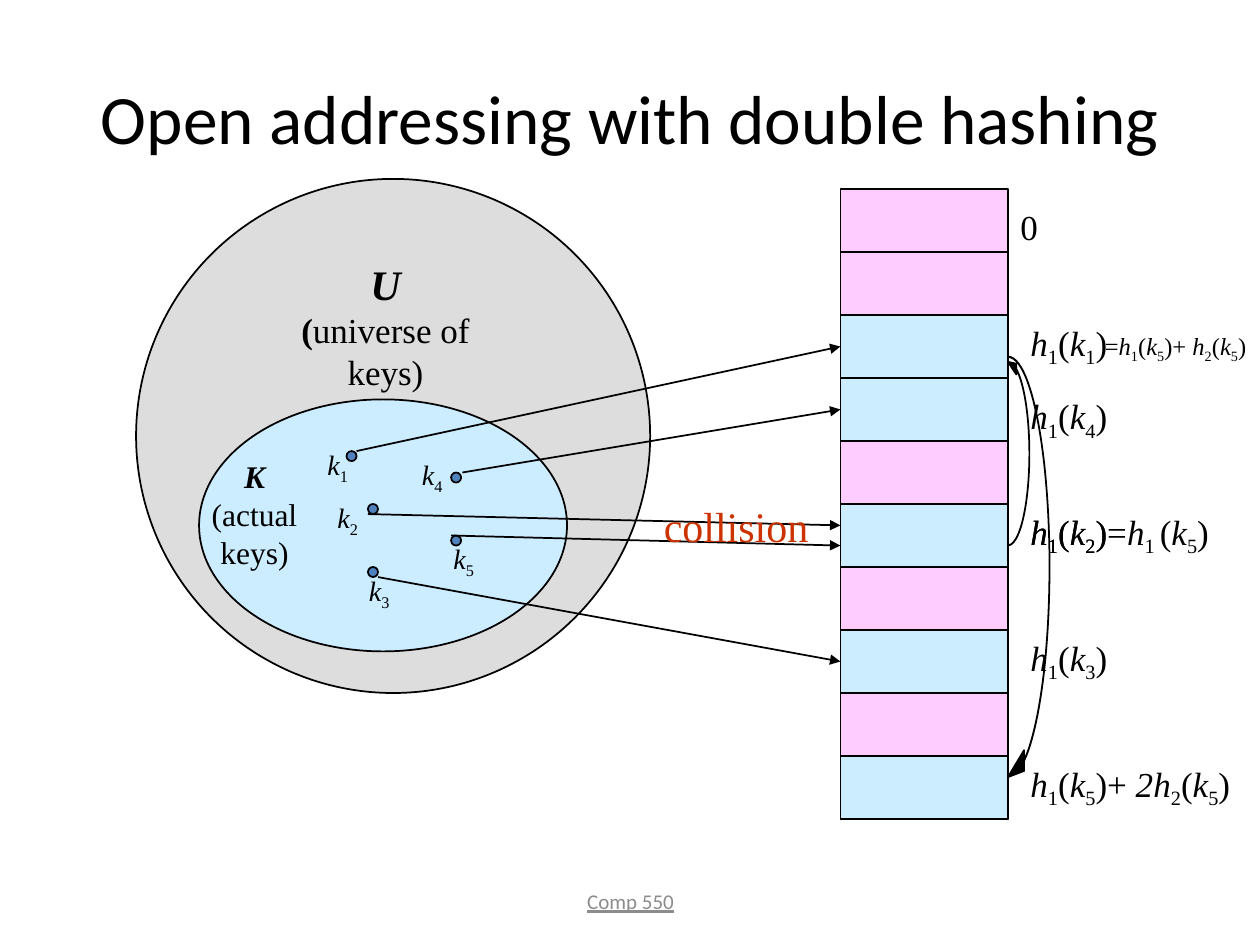
from itertools import groupby

from lxml.etree import SubElement
from pptx import Presentation
from pptx.dml.color import RGBColor
from pptx.enum.shapes import MSO_CONNECTOR as Connector, MSO_SHAPE as Shape
from pptx.enum.text import MSO_ANCHOR as Anchor, MSO_AUTO_SIZE as AutoSize, PP_ALIGN as Align
from pptx.oxml.ns import qn
from pptx.util import Inches, Pt

SERIF, SANS = "Times New Roman", "Calibri"
BLACK, GREY, RED = "000000", "8C8C8C", "CC3300"
PINK, SKY, SILVER, BLUE = "FFCCFF", "CCECFF", "DDDDDD", "4F81BD"


def color(value):
    return RGBColor.from_string(value)


def add_span(para, text, size, font=SERIF, ink=BLACK, subscript=False, **formats):
    span = para.add_run()
    span.text = text
    span.font.color.rgb = color(ink)
    for name, value in {"name": font, "size": Pt(size), **formats}.items():
        setattr(span.font, name, value)
    if subscript:
        span.font._element.set("baseline", "-25000")


def add_text(page, box, wrap=False, **formats):
    """Add an empty text box and return its text frame."""
    frame = page.shapes.add_textbox(*map(Inches, box)).text_frame
    settings = {"word_wrap": wrap, "auto_size": AutoSize.SHAPE_TO_FIT_TEXT, **formats}
    for name, value in settings.items():
        setattr(frame, name, value)
    return frame


def add_formula(page, box, formula, size=20, wrap=False):
    """Write a formula: a character after _ is a subscript, variables are italic."""
    marked, subscript = [], False
    for char in formula:
        if char == "_":
            subscript = True
            continue
        style = "sub" if subscript else "plain" if char in "()+=0" else "italic"
        marked.append((char, style))
        subscript = False
    para = add_text(page, box, wrap).paragraphs[0]
    for style, group in groupby(marked, key=lambda mark: mark[1]):
        text = "".join(char for char, _ in group)
        add_span(para, text, size, italic=style == "italic", subscript=style == "sub")


def add_paragraphs(frame, lines):
    """Fill a frame with centred paragraphs, each a list of (text, formats)."""
    for number, spans in enumerate(lines):
        para = frame.add_paragraph() if number else frame.paragraphs[0]
        para.alignment = Align.CENTER
        for text, formats in spans:
            add_span(para, text, **formats)


def add_outlined(page, kind, box, fill):
    shape = page.shapes.add_shape(kind, *map(Inches, box))
    shape.shadow.inherit = False
    shape.fill.solid()
    shape.fill.fore_color.rgb = color(fill)
    shape.line.color.rgb = color(BLACK)
    shape.line.width = Pt(1)
    return shape


def add_line(page, start, end, arrow=False):
    line = page.shapes.add_connector(Connector.STRAIGHT, *map(Inches, (*start, *end)))
    line.line.color.rgb = color(BLACK)
    line.line.width = Pt(1)
    if arrow:
        SubElement(line.line._get_or_add_ln(), qn("a:tailEnd"), type="triangle")
    SubElement(line._element.spPr, qn("a:effectLst"))


def add_title(page, box):
    title = page.shapes.title
    title.left, title.top, title.width, title.height = map(Inches, box)
    title.text_frame.vertical_anchor = Anchor.MIDDLE
    add_paragraphs(title.text_frame, [
        [("Open addressing with double hashing", {"size": 39.6, "font": SANS})]])


def add_hash_table(page, box, slots, used):
    left, top, width, height = box
    step = height / slots
    add_outlined(page, Shape.RECTANGLE, box, PINK)
    for slot in range(1, slots):
        y = top + slot * step
        add_line(page, (left, y), (left + width, y))
    for slot in used:
        add_outlined(page, Shape.RECTANGLE, (left, top + slot * step, width, step), SKY)


def add_slot_labels(page, left, top):
    add_formula(page, (left, top + 0.08, 0.34, 0.43), "0")
    labels = [
        (1, 0.84, "h_1(k_1)"),
        (1.58, 0.84, "h_1(k_4)"),
        (2.5, 0.84, "h_1(k_2)"),
        (3.5, 0.84, "h_1(k_3)"),
        (4.5, 1.89, "h_1(k_5)+ 2h_2(k_5)"),
        (2.5, 1.68, "h_1(k_2)=h_1_ (k_5)"),
    ]
    for down, width, formula in labels:
        add_formula(page, (left + 0.08, top + down, width, 0.44), formula)
    add_formula(page, (left + 0.67, top + 1.08, 1.83, 0.34),
                "=h_1(k_5)+ h_2(k_5)", size=14, wrap=True)


def add_probe_arrows(page, left, top):
    for width, height, flipped in [(0.33, 3.42, False), (0.17, 1.5, True)]:
        arrow = add_outlined(page, Shape.CURVED_LEFT_ARROW, (left, top, width, height), BLACK)
        for number, value in enumerate((0.009, 0.5, 0.389)):
            arrow.adjustments[number] = value
        if flipped:
            arrow._element.spPr.xfrm.set("flipV", "1")


def add_key_sets(page, left, top):
    """Draw the universe of keys with the set of actual keys inside."""
    add_outlined(page, Shape.OVAL, (left, top, 4.08, 4.08), SILVER)
    add_outlined(page, Shape.OVAL, (left + 0.5, top + 1.75, 2.92, 2), SKY)
    universe = add_text(page, (left + 0.88, top + 0.58, 2.2, 0.83), wrap=True,
                        margin_left=Inches(0.3), margin_right=Inches(0.3))
    add_paragraphs(universe, [
        [("U", {"size": 24, "bold": True, "italic": True})],
        [("(", {"size": 20, "bold": True}), ("universe of keys)", {"size": 20})],
    ])
    actual = add_text(page, (left + 0.5, top + 2.16, 0.88, 1))
    add_paragraphs(actual, [
        [("K", {"size": 18, "bold": True, "italic": True})],
        [("(actual", {"size": 18})],
        [("keys)", {"size": 18})],
    ])


def add_keys(page, table_left):
    """Draw each key's dot and name, and the arrow to its slot."""
    keys = [  # name, dot, name position, arrow start, arrow end height
        ("k_1", (2.75, 3.58), (2.5, 3.5), (2.83, 3.58), 2.75),
        ("k_4", (3.58, 3.75), (3.25, 3.58), (3.67, 3.75), 3.25),
        ("k_2", (2.92, 4), (2.58, 3.92), (2.92, 4.08), 4.17),
        ("k_5", (3.58, 4.25), (3.5, 4.25), (3.58, 4.25), 4.33),
        ("k_3", (2.92, 4.5), (2.83, 4.5), (3, 4.58), 5.25),
    ]
    for name, dot, label, start, end in keys:
        add_outlined(page, Shape.OVAL, (*dot, 0.08, 0.08), BLUE)
        add_formula(page, (*label, 0.38, 0.37), name, size=16)
        add_line(page, start, (table_left, end), arrow=True)


def add_collision(page, box):
    add_span(add_text(page, box, wrap=True).paragraphs[0], "collision", 24, ink=RED)


def add_footer(page, box):
    frame = add_text(page, box, wrap=True, auto_size=AutoSize.NONE,
                     vertical_anchor=Anchor.MIDDLE)
    add_paragraphs(frame, [
        [("Comp 550", {"size": 12, "font": SANS, "ink": GREY, "underline": True})]])


def main():
    deck = Presentation()
    deck.slide_width, deck.slide_height = Inches(10), Inches(7.5)
    page = deck.slides.add_slide(deck.slide_layouts[5])
    table_left, table_top, table_width = 6.67, 1.5, 1.33
    table_right = table_left + table_width
    add_title(page, (0.5, 0.3, 9, 1.25))
    add_hash_table(page, (table_left, table_top, table_width, 5), 10, used=(2, 3, 5, 7, 9))
    add_key_sets(page, 1.08, 1.42)
    add_keys(page, table_left)
    add_collision(page, (5.17, 3.92, 1.35, 0.5))
    add_probe_arrows(page, table_right, 2.83)
    add_slot_labels(page, table_right, table_top)
    add_footer(page, (3.42, 6.95, 3.17, 0.4))
    deck.save("out.pptx")


if __name__ == "__main__":
    main()
